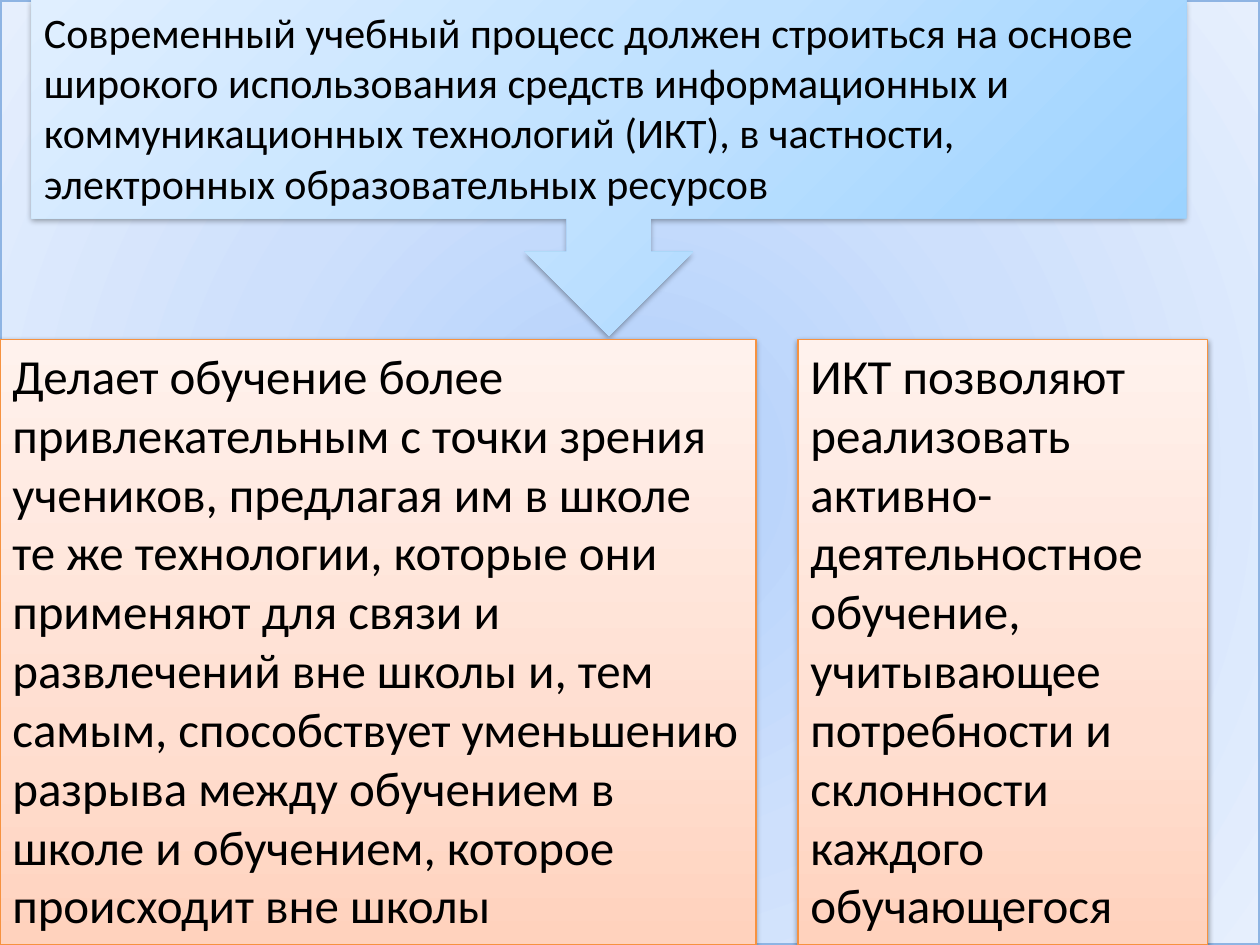
import pptx
import pptx.util
import pptx.dml.color
import pptx.enum.shapes
import pptx.enum.text
import pptx.oxml
import pptx.oxml.ns

COLS, ROWS = 120, 90
SHAPES = pptx.enum.shapes.MSO_SHAPE
SKY = [(0, "B0CFFB"), (50, "CEE0FC"), (100, "E6EFFD")]
BLUE = [(0, "96D0FF"), (50, "BFE1FF"), (100, "E0EFFF")]
PEACH = [(0, "FFD2BD"), (35, "FFDED0"), (100, "FFF2ED")]
RADIAL = '<a:path path="circle"><a:fillToRect l="50000" t="50000" r="50000" b="50000"/></a:path>'

LEAD = ("Современный учебный процесс должен строиться на основе широкого использования "
        "средств информационных и коммуникационных технологий (ИКТ), в частности, "
        "электронных образовательных ресурсов")
APPEAL = ("Делает обучение более привлекательным с точки зрения учеников, предлагая им в школе "
          "те же технологии, которые они применяют для связи и развлечений вне школы и, тем самым, "
          "способствует уменьшению разрыва между обучением в школе и обучением, "
          "которое происходит вне школы")
ACTIVE = ("ИКТ позволяют реализовать активно-деятельностное обучение, учитывающее "
          "потребности и склонности каждого обучающегося")


def color(text):
    return pptx.dml.color.RGBColor.from_string(text)


def node(tag, body, attrs=""):
    space = pptx.oxml.ns.nsdecls("a")
    return pptx.oxml.parse_xml(f"<a:{tag} {space} {attrs}>{body}</a:{tag}>")


class Board:
    """Draws styled elements on one slide, measured in grid columns and rows."""

    def __init__(self, deck):
        self.font = "Calibri"
        self.ink = "000000"
        self.unit_x = deck.slide_width / COLS
        self.unit_y = deck.slide_height / ROWS
        self.slide = deck.slides.add_slide(deck.slide_layouts[6])

    def place(self, col, row, wide, high):
        return (round(col * self.unit_x), round(row * self.unit_y),
                round(wide * self.unit_x), round(high * self.unit_y))

    def panel(self, kind, area, stops, angle=None, line=None, shade=None):
        shape = self.slide.shapes.add_shape(kind, *self.place(*area))
        shape.fill.background()
        props = shape._element.spPr
        marks = "".join(f'<a:gs pos="{pos * 1000}"><a:srgbClr val="{tone}"/></a:gs>'
                        for pos, tone in stops)
        flow = RADIAL if angle is None else f'<a:lin ang="{angle * 60000}" scaled="0"/>'
        grad = node("gradFill", f"<a:gsLst>{marks}</a:gsLst>{flow}", 'rotWithShape="1"')
        props.replace(props.find(pptx.oxml.ns.qn("a:noFill")), grad)
        if line:
            shape.line.color.rgb = color(line[0])
            shape.line.width = pptx.util.Pt(line[1])
        else:
            shape.line.fill.background()
        shape.shadow.inherit = False
        if shade:
            alpha, drop = shade
            attrs = (f'blurRad="{pptx.util.Pt(3.1)}" dist="{pptx.util.Pt(drop)}" '
                     'dir="5400000" rotWithShape="0"')
            tone = f'<a:srgbClr val="000000"><a:alpha val="{alpha * 1000}"/></a:srgbClr>'
            props.find(pptx.oxml.ns.qn("a:effectLst")).append(node("outerShdw", tone, attrs))
        return shape

    def letter(self, shape, text, size):
        frame = shape.text_frame
        frame.text = text
        frame.word_wrap = True
        frame.auto_size = pptx.enum.text.MSO_AUTO_SIZE.SHAPE_TO_FIT_TEXT
        frame.vertical_anchor = pptx.enum.text.MSO_ANCHOR.TOP
        para = frame.paragraphs[0]
        para.alignment = pptx.enum.text.PP_ALIGN.LEFT
        font = para.runs[0].font
        font.name = self.font
        font.size = pptx.util.Pt(size)
        font.color.rgb = color(self.ink)

    def label(self, area, text, size):
        self.letter(self.slide.shapes.add_textbox(*self.place(*area)), text, size)

    def card(self, area, text):
        box = self.panel(SHAPES.RECTANGLE, area, PEACH, 270, ("F69240", 0.75), (38, 1.6))
        self.letter(box, text, 28)


def main():
    deck = pptx.Presentation()
    deck.slide_width = pptx.util.Inches(10)
    deck.slide_height = pptx.util.Inches(7.5)
    board = Board(deck)
    board.panel(SHAPES.RECTANGLE, (0, 0, COLS, ROWS), SKY, line=("8EB4E3", 2))
    board.panel(SHAPES.DOWN_ARROW_CALLOUT, (3, 0, 110, 32), BLUE, 225, shade=(35, 1.8))
    board.label((3, 0, 110, 20.6), LEAD, 24)
    top = 32.3
    for left, wide, text in ((0, 72, APPEAL), (76, 39, ACTIVE)):
        board.card((left, top, wide, ROWS - top), text)
    deck.save("out.pptx")


if __name__ == "__main__":
    main()
